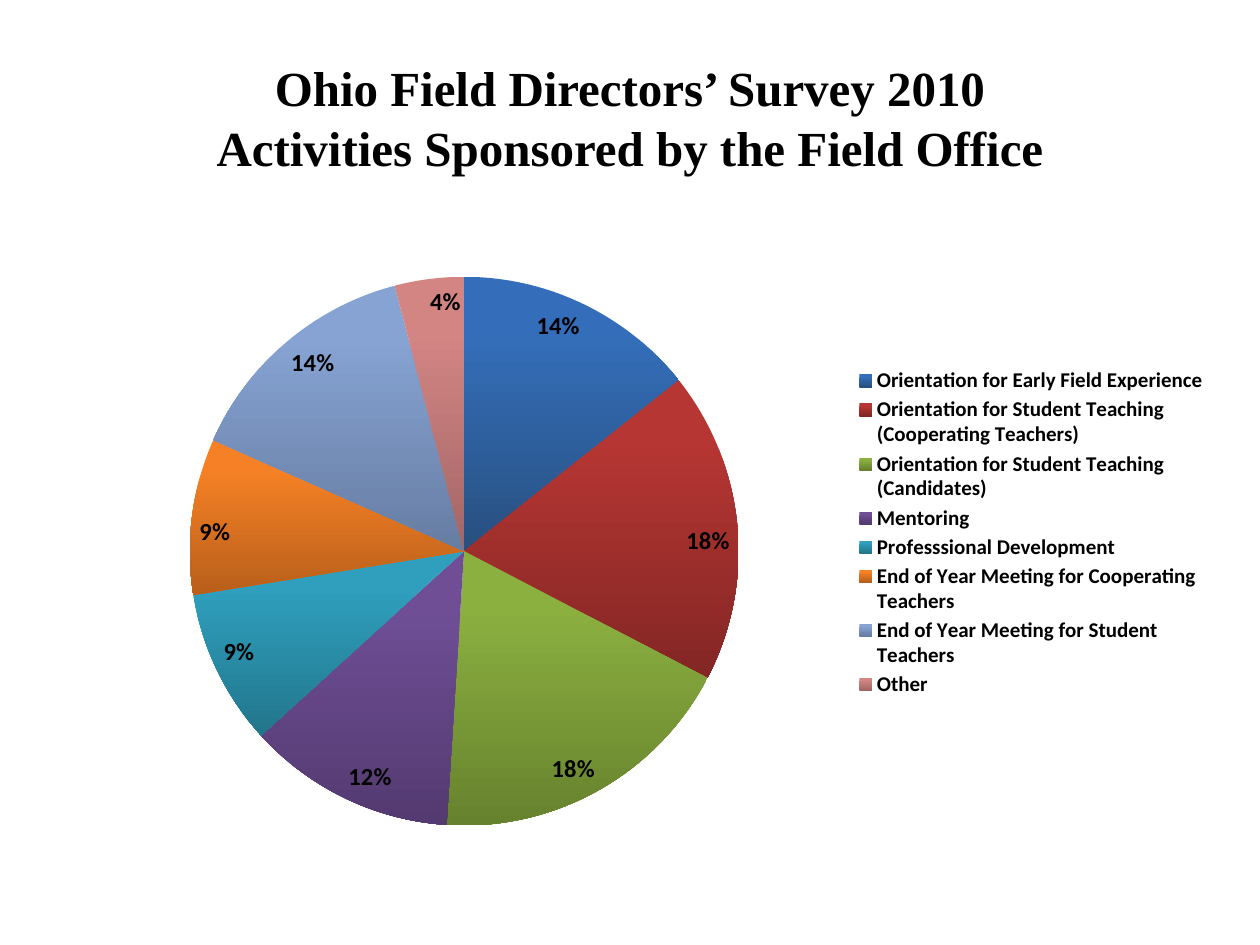
"""Build the slide on activities sponsored by the field office."""
from dataclasses import dataclass

from lxml.etree import SubElement
from pptx import Presentation
from pptx.chart.data import CategoryChartData as ChartData
from pptx.dml.color import RGBColor as Rgb
from pptx.enum.chart import XL_CHART_TYPE as ChartType
from pptx.enum.chart import XL_LABEL_POSITION as LabelPosition
from pptx.enum.chart import XL_LEGEND_POSITION as LegendPosition
from pptx.enum.text import MSO_ANCHOR as Anchor
from pptx.enum.text import PP_ALIGN as Align
from pptx.oxml.ns import qn
from pptx.util import Cm, Pt


@dataclass(frozen=True)
class Theme:
    """Hold the fonts, type sizes and colours of the slide."""
    title_font: str = "Times New Roman"
    chart_font: str = "Calibri"
    title_size: int = 28
    title_leading: int = 34
    label_size: int = 14
    legend_size: int = 12
    chart_size: int = 10
    text: str = "000000"
    slices: tuple = (
        ("346EBA", "285080"),
        ("B63633", "832624"),
        ("8BB040", "67822E"),
        ("6F4E96", "533A70"),
        ("2F9FBD", "22768C"),
        ("F58025", "B85F1A"),
        ("86A3D3", "677DA2"),
        ("D38584", "A26666"),
    )


THEME = Theme()
TITLE_LINES = (
    "Ohio Field Directors’ Survey 2010",
    "Activities Sponsored by the Field Office",
)
ACTIVITIES = {
    "Orientation for Early Field Experience": 14,
    "Orientation for Student Teaching (Cooperating Teachers)": 18,
    "Orientation for Student Teaching (Candidates)": 18,
    "Mentoring": 12,
    "Professsional Development": 9,
    "End of Year Meeting for Cooperating Teachers": 9,
    "End of Year Meeting for Student Teachers": 14,
    "Other": 4,
}


def style_font(font, name, size, bold):
    """Apply a typeface, size and weight in the text colour."""
    font.name = name
    font.size = Pt(size)
    font.bold = bold
    font.color.rgb = Rgb.from_string(THEME.text)


def set_title(slide):
    """Place the title and write its lines run by run."""
    title = slide.shapes.title
    title.left, title.top = Cm(1.27), Cm(0.76)
    title.width, title.height = Cm(22.86), Cm(3.18)
    title.text_frame.vertical_anchor = Anchor.MIDDLE
    paragraph = title.text_frame.paragraphs[0]
    paragraph.alignment = Align.CENTER
    paragraph.line_spacing = Pt(THEME.title_leading)
    for index, line in enumerate(TITLE_LINES):
        if index:
            paragraph.add_line_break()
        run = paragraph.add_run()
        run.text = line
        style_font(run.font, THEME.title_font, THEME.title_size, True)


def set_layout(parent, position, inner=False, **fractions):
    """Give a chart part a manual layout in fractions of the chart."""
    for old_layout in parent.findall(qn("c:layout")):
        parent.remove(old_layout)
    layout = SubElement(parent, qn("c:layout"))
    parent.insert(position, layout)
    manual = SubElement(layout, qn("c:manualLayout"))
    settings = {"layoutTarget": "inner"} if inner else {}
    settings.update(xMode="edge", yMode="edge", **fractions)
    for name, value in settings.items():
        SubElement(manual, qn(f"c:{name}")).set("val", str(value))


def fill_slices(series):
    """Shade each slice from light at the top to dark at the bottom."""
    for index, colours in enumerate(THEME.slices):
        fill = series.points[index].format.fill
        fill.gradient()
        fill.gradient_angle = 270
        for stop, colour in zip(fill.gradient_stops, colours):
            stop.color.rgb = Rgb.from_string(colour)
        fill.gradient_stops[0].position = 0.2


def add_pie(slide):
    """Add the pie chart with percentage labels and a legend."""
    data = ChartData()
    data.categories = list(ACTIVITIES)
    data.add_series("Series 1", list(ACTIVITIES.values()))
    frame = slide.shapes.add_chart(
        ChartType.PIE, Cm(1.7), Cm(4.45), Cm(22.86), Cm(12.57), data)
    chart = frame.chart
    chart.has_title = False
    style_font(chart.font, THEME.chart_font, THEME.chart_size, False)

    plot = chart.plots[0]
    plot.vary_by_categories = True
    fill_slices(plot.series[0])
    plot.has_data_labels = True
    labels = plot.data_labels
    labels.show_percentage = True
    labels.show_value = False
    labels.number_format = "0%"
    labels.number_format_is_linked = False
    labels.position = LabelPosition.INSIDE_END
    style_font(labels.font, THEME.chart_font, THEME.label_size, True)

    chart.has_legend = True
    legend = chart.legend
    legend.position = LegendPosition.RIGHT
    legend.include_in_layout = False
    style_font(legend.font, THEME.chart_font, THEME.legend_size, True)

    plot_area = chart.element.find(f".//{qn('c:plotArea')}")
    legend_part = chart.element.find(f".//{qn('c:legend')}")
    set_layout(plot_area, 0, inner=True, x=0.09, y=0.09, w=0.49, h=0.88)
    set_layout(legend_part, 1, x=0.68, y=0.23, w=0.31, h=0.54)


def main():
    """Create the slide and save the presentation."""
    presentation = Presentation()
    presentation.slide_width, presentation.slide_height = Cm(25.4), Cm(19.05)
    slide = presentation.slides.add_slide(presentation.slide_layouts[5])
    set_title(slide)
    add_pie(slide)
    presentation.save("out.pptx")


main()
